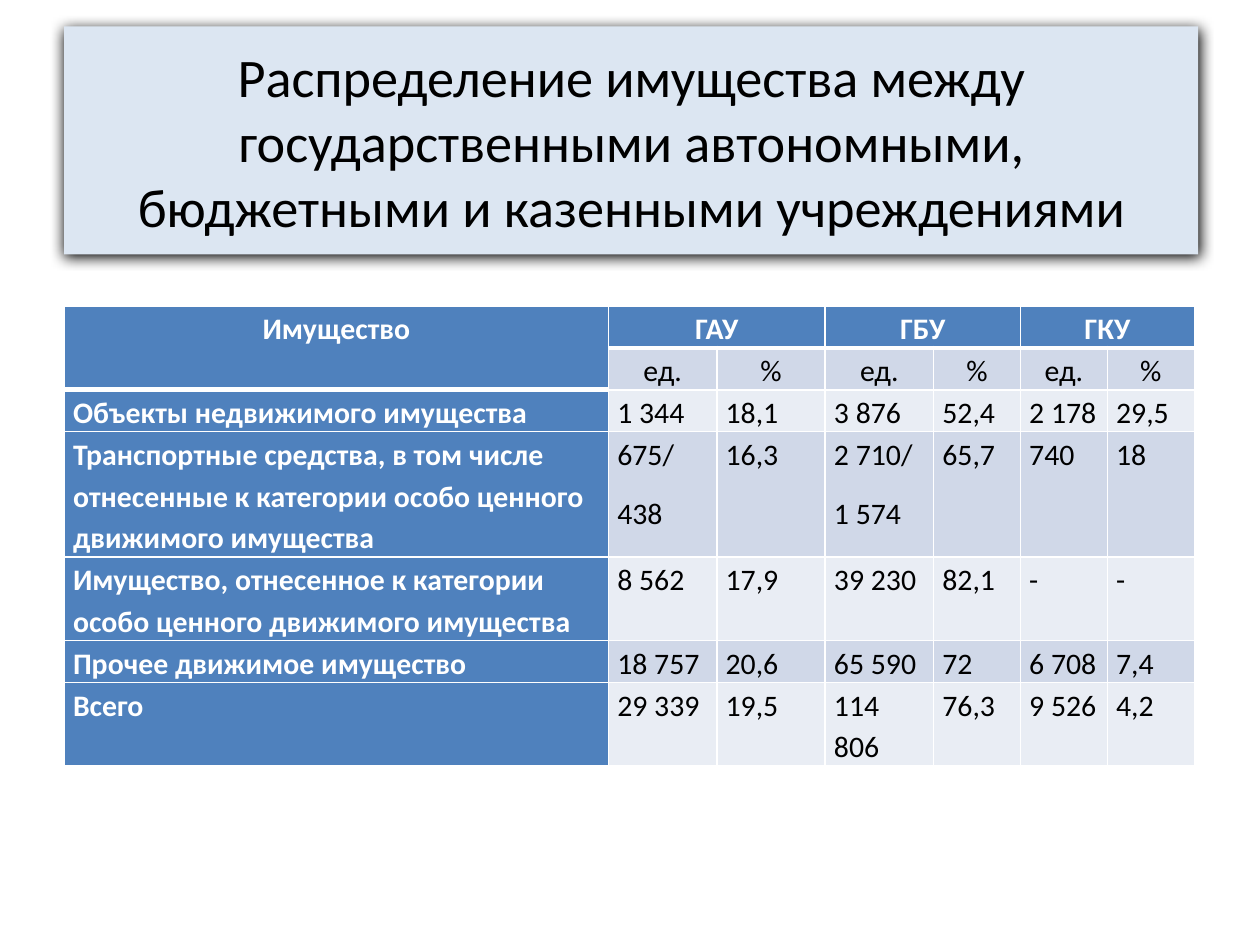
from dataclasses import dataclass

from lxml import etree
from pptx import Presentation
from pptx.dml.color import RGBColor
from pptx.enum import shapes, text
from pptx.oxml import ns
from pptx.util import Inches, Pt


@dataclass(frozen=True)
class Theme:
    font: str = "Calibri"
    title_size: int = 31
    table_size: int = 17
    title_fill: str = "DCE6F2"
    header_fill: str = "4F81BD"
    bands: tuple = ("E9EDF4", "D0D8E8")
    dark: str = "000000"
    light: str = "FFFFFF"


theme = Theme()


def style(paragraph, size, color, bold, centered):
    font = paragraph.font
    font.name, font.size, font.bold = theme.font, Pt(size), bold
    font.color.rgb = RGBColor.from_string(color)
    paragraph.alignment = text.PP_ALIGN.CENTER if centered else text.PP_ALIGN.LEFT


def set_borders(cell, widths):
    """Draw light borders; widths are points for left, right, top, bottom."""
    properties = cell._tc.get_or_add_tcPr()
    for position, (side, width) in enumerate(zip("LRTB", widths)):
        line = etree.Element(ns.qn(f"a:ln{side}"), w=str(Pt(width)))
        fill = etree.SubElement(line, ns.qn("a:solidFill"))
        etree.SubElement(fill, ns.qn("a:srgbClr"), val=theme.light)
        properties.insert(position, line)


deck = Presentation()
deck.slide_width, deck.slide_height = Inches(10), Inches(7.5)
slide = deck.slides.add_slide(deck.slide_layouts[6])

# Title panel
title = slide.shapes.add_shape(
    shapes.MSO_SHAPE.RECTANGLE, Inches(0.51), Inches(0.21), Inches(9), Inches(1.81))
title.fill.solid()
title.fill.fore_color.rgb = RGBColor.from_string(theme.title_fill)
title.line.fill.background()
title.shadow.inherit = False
effects = title._element.spPr.find(ns.qn("a:effectLst"))
shadow = etree.SubElement(
    effects, ns.qn("a:outerShdw"), blurRad=str(Pt(8.5)), dist=str(Pt(1)),
    dir="5400000", algn="ctr", rotWithShape="0")
etree.SubElement(shadow, ns.qn("a:srgbClr"), val=theme.dark)

title.text_frame.word_wrap = True
title.text_frame.vertical_anchor = text.MSO_ANCHOR.MIDDLE
heading = title.text_frame.paragraphs[0]
heading.add_run().text = "Распределение имущества между государственными автономными,"
heading.add_line_break()
heading.add_run().text = "бюджетными и казенными учреждениями"
style(heading, theme.title_size, theme.dark, False, True)

# Property table: a tuple in a cell holds its paragraphs
rows = [
    ["Имущество", "ГАУ", "", "ГБУ", "", "ГКУ", ""],
    [""] + ["ед.", "%"] * 3,
    ["Объекты недвижимого имущества",
     "1 344", "18,1", "3 876", "52,4", "2 178", "29,5"],
    ["Транспортные средства, в том числе отнесенные к категории особо ценного "
     "движимого имущества",
     ("675/", "438"), "16,3", ("2 710/", "1 574"), "65,7", "740", "18"],
    ["Имущество, отнесенное к категории особо ценного движимого имущества",
     "8 562", "17,9", "39 230", "82,1", "-", "-"],
    ["Прочее движимое имущество",
     "18 757", "20,6", "65 590", "72", "6 708", "7,4"],
    ["Всего", "29 339", "19,5", "114 806", "76,3", "9 526", "4,2"],
]
column_widths = [4.32] + [0.86] * 3 + [0.69] * 3
row_heights = [0.32, 0.32, 0.32, 0.95, 0.64, 0.32, 0.64]

table = slide.shapes.add_table(
    len(rows), len(column_widths), Inches(0.51), Inches(2.43),
    Inches(8.99), Inches(3.58)).table
for column, width in zip(table.columns, column_widths):
    column.width = Inches(width)
for row, height in zip(table.rows, row_heights):
    row.height = Inches(height)

for r, row in enumerate(rows):
    for c, content in enumerate(row):
        cell = table.cell(r, c)
        is_header = r == 0 or c == 0
        header_end = 1 if c == 0 else 0
        set_borders(cell, (1, 1, 3 if r == header_end + 1 else 1,
                           3 if r == header_end else 1))
        cell.fill.solid()
        cell.fill.fore_color.rgb = RGBColor.from_string(
            theme.header_fill if is_header else theme.bands[r % 2])
        cell.margin_left = cell.margin_right = Inches(0.07)
        cell.margin_top = cell.margin_bottom = 0
        lines = content if isinstance(content, tuple) else (content,)
        for i, line in enumerate(lines):
            frame = cell.text_frame
            paragraph = frame.add_paragraph() if i else frame.paragraphs[0]
            paragraph.text = line
            paragraph.line_spacing = 1.15
            paragraph.space_after = Pt(10)
            style(paragraph, theme.table_size,
                  theme.light if is_header else theme.dark, is_header, r < 2)

table.cell(0, 0).merge(table.cell(1, 0))
for c in (1, 3, 5):
    table.cell(0, c).merge(table.cell(0, c + 1))

deck.save("out.pptx")
